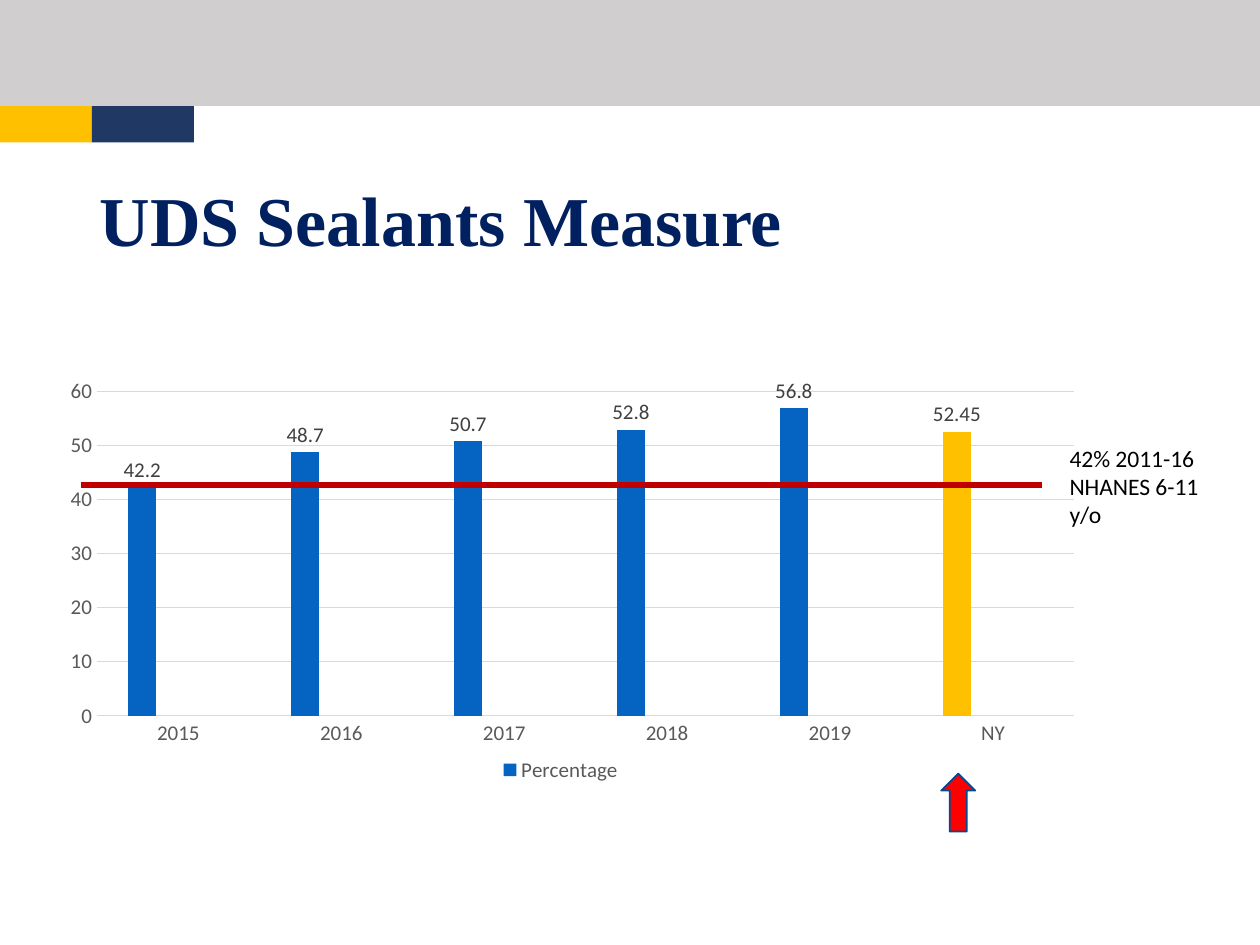
from lxml import etree
from pptx import Presentation
from pptx.chart.data import CategoryChartData
from pptx.dml.color import RGBColor
from pptx.enum.chart import (XL_CHART_TYPE, XL_LABEL_POSITION,
                             XL_LEGEND_POSITION, XL_TICK_MARK)
from pptx.enum.shapes import MSO_CONNECTOR, MSO_SHAPE
from pptx.enum.text import MSO_ANCHOR, PP_ALIGN
from pptx.oxml.ns import qn
from pptx.util import Inches, Pt

COLUMN = XL_CHART_TYPE.COLUMN_CLUSTERED
OUTER = XL_LABEL_POSITION.OUTSIDE_END
BOTTOM = XL_LEGEND_POSITION.BOTTOM
NO_TICK = XL_TICK_MARK.NONE
STRAIGHT = MSO_CONNECTOR.STRAIGHT
RECT, ARROW = MSO_SHAPE.RECTANGLE, MSO_SHAPE.UP_ARROW
MIDDLE, TOP = MSO_ANCHOR.MIDDLE, MSO_ANCHOR.TOP
LEFT = PP_ALIGN.LEFT

COLORS = {
    "gold": "FFC000", "navy": "203864", "band": "D0CECE", "title": "002060",
    "bar": "0563C1", "green": "70AD47", "gray": "A5A5A5", "grid": "D9D9D9",
    "axis": "595959", "label": "404040", "goal": "C00000", "black": "000000",
    "red": "FF0000", "edge": "04498F",
}
YEARS = ["2015", "2016", "2017", "2018", "2019", "NY"]
RATES = [42.2, 48.7, 50.7, 52.8, 56.8, 52.45]
SERIES = [("Percentage", RATES, "bar"),
          ("Series 2", [None] * len(YEARS), "green"),
          ("Series 3", [None] * len(YEARS), "gray")]
PLOT = {"x": 0.073, "y": 0.109, "w": 0.9, "h": 0.73}


def rgb(name):
    """Return the named colour."""
    return RGBColor.from_string(COLORS[name])


def paint(part, name):
    """Give a part a solid fill."""
    part.fill.solid()
    part.fill.fore_color.rgb = rgb(name)


def style(font, size, color, face="Calibri", bold=False):
    """Format a font."""
    font.size, font.name, font.bold = Pt(size), face, bold
    font.color.rgb = rgb(color)


def write(frame, text, anchor=TOP, space=1.0, **look):
    """Write one formatted paragraph into a text frame."""
    frame.word_wrap = True
    frame.vertical_anchor = anchor
    para = frame.paragraphs[0]
    para.alignment, para.line_spacing = LEFT, space
    run = para.add_run()
    run.text = text
    style(run.font, **look)


def block(slide, kind, box, fill, line=None):
    """Draw a filled preset shape."""
    shape = slide.shapes.add_shape(kind, *map(Inches, box))
    shape.shadow.inherit = False
    paint(shape, fill)
    if line:
        shape.line.color.rgb = rgb(line)
        shape.line.width = Pt(1)
    else:
        shape.line.fill.background()


def header(slide, box):
    """Draw the top band with two tabs hanging from its lower edge."""
    left, top, width, height = box
    base = top + height
    block(slide, RECT, (left, base, 0.73, 0.29), "gold")
    block(slide, RECT, (left + 0.73, base, 0.81, 0.29), "navy")
    block(slide, RECT, box, "band")


def heading(slide, box):
    """Place the slide title."""
    title = slide.shapes.title
    title.left, title.top, title.width, title.height = map(Inches, box)
    write(title.text_frame, "UDS Sealants Measure", anchor=MIDDLE, space=0.9,
          size=40, color="title", face="Times New Roman", bold=True)


def node(parent, tag, val):
    """Add a chart element that holds one value."""
    etree.SubElement(parent, qn(tag)).set("val", str(val))


def fit(chart):
    """Fix the inner plot area and hide the empty series in the legend."""
    area = chart.element.find(".//" + qn("c:plotArea"))
    for old in area.findall(qn("c:layout")):
        area.remove(old)
    layout = etree.Element(qn("c:layout"))
    manual = etree.SubElement(layout, qn("c:manualLayout"))
    node(manual, "c:layoutTarget", "inner")
    for side in "xy":
        node(manual, f"c:{side}Mode", "edge")
    for side, val in PLOT.items():
        node(manual, f"c:{side}", val)
    area.insert(0, layout)
    legend = chart.element.find(".//" + qn("c:legend"))
    for spot in range(1, len(SERIES)):
        entry = etree.Element(qn("c:legendEntry"))
        node(entry, "c:idx", spot)
        node(entry, "c:delete", 1)
        legend.insert(spot, entry)


def axes(chart):
    """Format both axes and the grid."""
    cat, val = chart.category_axis, chart.value_axis
    for axis in (cat, val):
        axis.major_tick_mark = axis.minor_tick_mark = NO_TICK
        style(axis.tick_labels.font, 12, "axis")
    val.minimum_scale, val.maximum_scale, val.major_unit = 0, 60, 10
    val.has_major_gridlines = True
    val.format.line.fill.background()
    for line in (cat.format.line, val.major_gridlines.format.line):
        line.color.rgb = rgb("grid")
        line.width = Pt(0.75)


def graph(slide, box):
    """Place the column chart of yearly rates."""
    data = CategoryChartData()
    data.categories = YEARS
    for name, vals, _ in SERIES:
        data.add_series(name, vals)
    chart = slide.shapes.add_chart(COLUMN, *map(Inches, box), data).chart
    style(chart.font, 10, "black")
    chart.has_title = False
    chart.has_legend = True
    chart.legend.position = BOTTOM
    chart.legend.include_in_layout = False
    style(chart.legend.font, 12, "axis")
    plot = chart.plots[0]
    plot.gap_width, plot.overlap = 219, -27
    plot.vary_by_categories = False
    for series, (_, _, color) in zip(plot.series, SERIES):
        paint(series.format, color)
        series.invert_if_negative = False
    rates = plot.series[0]
    paint(rates.points[len(YEARS) - 1].format, "gold")
    labels = rates.data_labels
    labels.show_value, labels.position = True, OUTER
    style(labels.font, 12, "label")
    axes(chart)
    fit(chart)


def goal(slide, box):
    """Draw the benchmark line and its note to the right."""
    left, top, width, height = box
    mid = Inches(top + 0.38)
    line = slide.shapes.add_connector(
        STRAIGHT, Inches(left), mid, Inches(left + 7.63), mid)
    line.line.color.rgb = rgb("goal")
    line.line.width = Pt(3)
    etree.SubElement(line.element.spPr, qn("a:effectLst"))
    note = slide.shapes.add_textbox(Inches(left + 7.75), Inches(top),
                                    Inches(width - 7.75), Inches(height))
    write(note.text_frame, "42% 2011-16 NHANES 6-11 y/o",
          size=13.5, color="black")


def main():
    """Build the slide and save it."""
    deck = Presentation()
    deck.slide_width, deck.slide_height = Inches(10), Inches(7.5)
    slide = deck.slides.add_slide(deck.slide_layouts[5])
    header(slide, (0, 0, 10, 0.84))
    heading(slide, (0.69, 1.36, 8.62, 0.83))
    graph(slide, (0.14, 2.72, 8.62, 3.53))
    goal(slide, (0.64, 3.47, 9.02, 0.78))
    block(slide, ARROW, (7.47, 6.14, 0.27, 0.46), "red", "edge")
    deck.save("out.pptx")


if __name__ == "__main__":
    main()
